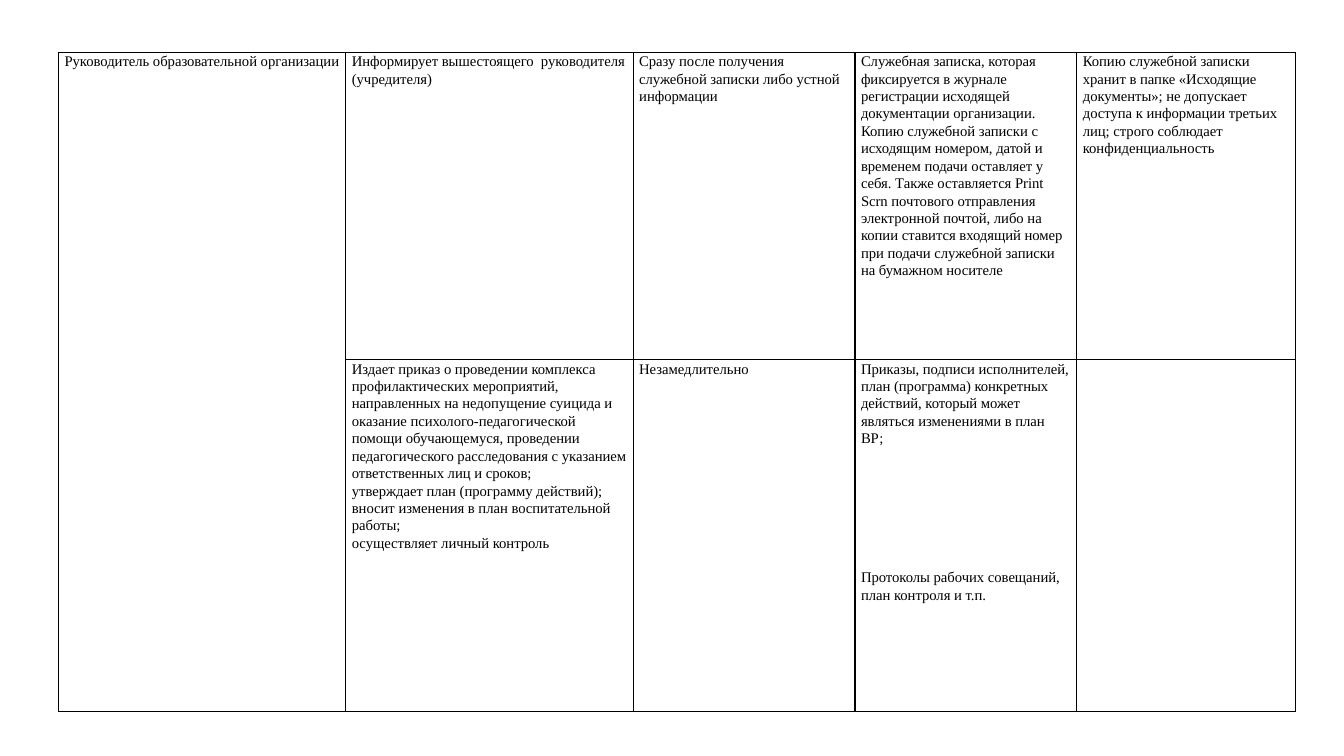
from dataclasses import dataclass

import pptx
import pptx.util
import pptx.dml.color
import pptx.oxml
import pptx.oxml.ns
from pptx.util import Inches, Pt


@dataclass(frozen=True)
class Theme:
    font: str = "Times New Roman"
    size: float = 10.5
    ink: str = "000000"
    border: float = 1
    line_spacing: float = 1.07
    section_gap: float = 87


THEME = Theme()
COLUMN_WIDTHS = [2.85, 2.85, 2.2, 2.2, 2.17]
ROW_HEIGHTS = [3.05, 3.49]
CELL_FORMAT = {
    "margin_left": Inches(0.06),
    "margin_right": Inches(0.06),
    "margin_top": 0,
    "margin_bottom": 0,
}
FONT_FORMAT = {"name": THEME.font, "size": Pt(THEME.size)}

# Each cell is a list of sections, and each section is a list of paragraphs.
ACTIONS = [
    [
        [["Руководитель образовательной организации"]],
        [["Информирует вышестоящего  руководителя (учредителя)"]],
        [["Сразу после получения служебной записки либо устной информации"]],
        [["Служебная записка, которая фиксируется в журнале регистрации "
          "исходящей документации организации. Копию служебной записки с "
          "исходящим номером, датой и временем подачи оставляет у себя. "
          "Также оставляется Print Scrn почтового отправления электронной "
          "почтой, либо на копии ставится входящий номер при подачи "
          "служебной записки на бумажном носителе"]],
        [["Копию служебной записки хранит в папке «Исходящие документы»; "
          "не допускает доступа к информации третьих лиц; строго соблюдает "
          "конфиденциальность"]],
    ],
    [
        [],
        [["Издает приказ о проведении комплекса профилактических "
          "мероприятий, направленных на недопущение суицида и оказание "
          "психолого-педагогической помощи обучающемуся, проведении "
          "педагогического расследования с указанием ответственных лиц "
          "и сроков;",
          "утверждает план (программу действий);",
          "вносит изменения в план воспитательной работы;",
          "осуществляет личный контроль"]],
        [["Незамедлительно"]],
        [["Приказы, подписи исполнителей, план (программа) конкретных "
          "действий, который может являться изменениями в план ВР;"],
         ["Протоколы рабочих совещаний, план контроля и т.п."]],
        [],
    ],
]


def set_format(obj, values):
    for name, value in values.items():
        setattr(obj, name, value)


def add_borders(cell):
    tcPr = cell._tc.get_or_add_tcPr()
    for i, side in enumerate(("lnL", "lnR", "lnT", "lnB")):
        ln = pptx.oxml.parse_xml(
            f'<a:{side} {pptx.oxml.ns.nsdecls("a")} w="{Pt(THEME.border)}">'
            f'<a:solidFill><a:srgbClr val="{THEME.ink}"/></a:solidFill>'
            f'</a:{side}>')
        tcPr.insert(i, ln)


def write_sections(tf, sections):
    """Write the paragraphs, with a wide gap before each later section."""
    first = True
    for i, section in enumerate(sections):
        for j, text in enumerate(section):
            p = tf.paragraphs[0] if first else tf.add_paragraph()
            first = False
            p.line_spacing = THEME.line_spacing
            if i and not j:
                p.space_before = Pt(THEME.section_gap)
            r = p.add_run()
            r.text = text
            set_format(r.font, FONT_FORMAT)
            r.font.color.rgb = pptx.dml.color.RGBColor.from_string(THEME.ink)


def add_action_table(s):
    frame = s.shapes.add_table(
        len(ROW_HEIGHTS), len(COLUMN_WIDTHS), Inches(0.58), Inches(0.52),
        Inches(sum(COLUMN_WIDTHS)), Inches(sum(ROW_HEIGHTS)))
    table = frame.table
    set_format(table, {"first_row": False, "horz_banding": False})
    for column, width in zip(table.columns, COLUMN_WIDTHS):
        column.width = Inches(width)
    for row, height, contents in zip(table.rows, ROW_HEIGHTS, ACTIONS):
        row.height = Inches(height)
        for cell, sections in zip(row.cells, contents):
            set_format(cell, CELL_FORMAT)
            cell.fill.background()
            add_borders(cell)
            write_sections(cell.text_frame, sections)
    table.cell(0, 0).merge(table.cell(1, 0))


def main():
    prs = pptx.Presentation()
    set_format(prs, {"slide_width": Inches(13.33), "slide_height": Inches(7.5)})
    s = prs.slides.add_slide(prs.slide_layouts[6])
    add_action_table(s)
    prs.save("out.pptx")


if __name__ == "__main__":
    main()
